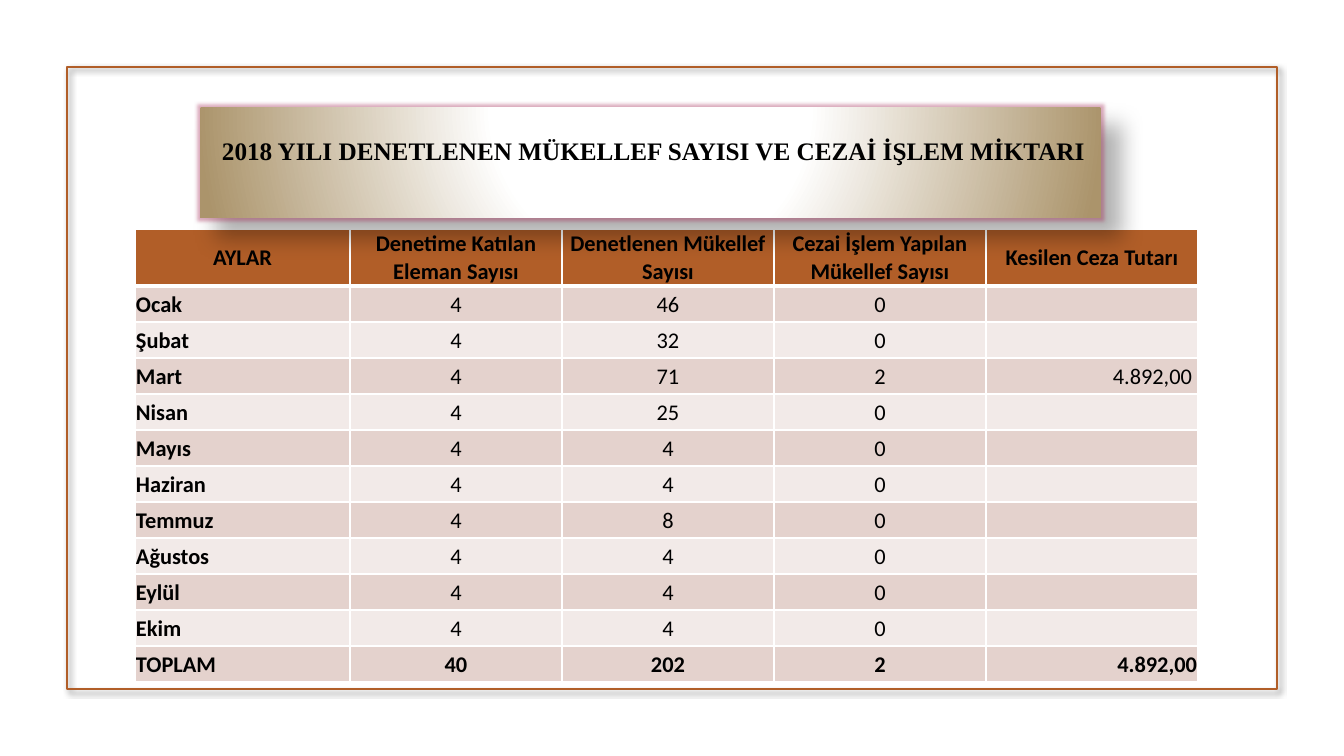
import pptx
import pptx.util
import pptx.oxml
from pptx.dml.color import RGBColor
from pptx.enum.shapes import MSO_SHAPE
from pptx.enum.text import MSO_ANCHOR, PP_ALIGN

TITLE = "2018 YILI DENETLENEN MÜKELLEF SAYISI VE CEZAİ İŞLEM MİKTARI"
ROWS = [
    ("AYLAR", "Denetime Katılan Eleman Sayısı", "Denetlenen Mükellef Sayısı",
     "Cezai İşlem Yapılan Mükellef Sayısı", "Kesilen Ceza Tutarı"),
    ("Ocak", "4", "46", "0", ""),
    ("Şubat", "4", "32", "0", ""),
    ("Mart", "4", "71", "2", "4.892,00"),
    ("Nisan", "4", "25", "0", ""),
    ("Mayıs", "4", "4", "0", ""),
    ("Haziran", "4", "4", "0", ""),
    ("Temmuz", "4", "8", "0", ""),
    ("Ağustos", "4", "4", "0", ""),
    ("Eylül", "4", "4", "0", ""),
    ("Ekim", "4", "4", "0", ""),
    ("TOPLAM", "40", "202", "2", "4.892,00"),
]
COL_WIDTHS = [215, 212, 212, 212, 212]
HEADER_HEIGHT, ROW_HEIGHT = 57, 36
FRAME_BOX = (67, 67, 1210, 622)
TITLE_BOX = (200, 108, 901, 110)
TABLE_LEFT, TABLE_TOP = 135, 229

BLACK = RGBColor(0, 0, 0)
WHITE = RGBColor(255, 255, 255)
RUST = RGBColor(0xB1, 0x5E, 0x28)
BAND_DARK = RGBColor(0xE4, 0xD2, 0xCD)
BAND_LIGHT = RGBColor(0xF2, 0xEA, 0xE8)
TAN = RGBColor(0xAB, 0x94, 0x6B)
ROSE = RGBColor(0xA8, 0x30, 0x5C)
NS = 'xmlns:a="http://schemas.openxmlformats.org/drawingml/2006/main"'


def px(n):
    return round(n * 914400 / 100.8)


def color_xml(color, alpha=100):
    return f'<a:srgbClr val="{color}"><a:alpha val="{alpha * 1000}"/></a:srgbClr>'


def add_xml(parent, xml):
    parent.append(pptx.oxml.parse_xml(xml))


def add_effects(shape, alpha, blur, dist, glow=""):
    add_xml(shape._element.spPr,
            f'<a:effectLst {NS}>{glow}<a:outerShdw blurRad="{blur * 12700}" '
            f'dist="{dist * 12700}" dir="2700000" algn="tl" rotWithShape="0">'
            f'{color_xml(BLACK, alpha)}</a:outerShdw></a:effectLst>')


def set_font(p, name, size, bold):
    p.font.name = name
    p.font.size = pptx.util.Pt(size)
    p.font.bold = bold
    p.font.color.rgb = BLACK


def add_frame(s):
    frame = s.shapes.add_shape(MSO_SHAPE.RECTANGLE, *map(px, FRAME_BOX))
    frame.fill.background()
    frame.line.color.rgb = RUST
    frame.line.width = pptx.util.Pt(1.25)
    add_effects(frame, 60, 4, 3)


def format_cell(cell, text, row, col):
    header, total = row == 0, row == len(ROWS) - 1
    cell.fill.solid()
    cell.fill.fore_color.rgb = RUST if header else BAND_DARK if row % 2 else BAND_LIGHT
    cell.vertical_anchor = MSO_ANCHOR.MIDDLE
    amount = col == 4 and not header
    cell.margin_left = cell.margin_top = px(1)
    cell.margin_right = px(6 if amount and not total else 1)
    cell.margin_bottom = 0
    p = cell.text_frame.paragraphs[0]
    p.text = text
    p.alignment = (PP_ALIGN.RIGHT if amount else
                   PP_ALIGN.LEFT if col == 0 and not header else PP_ALIGN.CENTER)
    set_font(p, "Calibri", 16, header or total or col == 0)
    tcPr = cell._tc.get_or_add_tcPr()
    for i, side in enumerate("LRTB"):
        thick = (header and side == "B") or (row == 1 and side == "T")
        tcPr.insert(i, pptx.oxml.parse_xml(
            f'<a:ln{side} {NS} w="{12700 * (3 if thick else 1)}"><a:solidFill>'
            f'{color_xml(WHITE)}</a:solidFill></a:ln{side}>'))


def add_month_table(s):
    heights = [HEADER_HEIGHT] + [ROW_HEIGHT] * (len(ROWS) - 1)
    table = s.shapes.add_table(len(ROWS), len(COL_WIDTHS), px(TABLE_LEFT), px(TABLE_TOP),
                               px(sum(COL_WIDTHS)), px(sum(heights))).table
    table.horz_banding = False
    for column, width in zip(table.columns, COL_WIDTHS):
        column.width = px(width)
    for r, values in enumerate(ROWS):
        table.rows[r].height = px(heights[r])
        for c, text in enumerate(values):
            format_cell(table.cell(r, c), text, r, c)


def format_title(s):
    title = s.shapes.title
    title.left, title.top, title.width, title.height = map(px, TITLE_BOX)
    stops = "".join(f'<a:gs pos="{pos * 1000}">{color_xml(color)}</a:gs>'
                    for pos, color in ((0, WHITE), (35, WHITE), (100, TAN)))
    add_xml(title._element.spPr,
            f'<a:gradFill {NS} rotWithShape="1"><a:gsLst>{stops}</a:gsLst>'
            '<a:path path="circle"><a:fillToRect l="50000" t="-80000" r="50000" b="180000"/>'
            '</a:path></a:gradFill>')
    add_effects(title, 30, 15, 18,
                f'<a:glow rad="63500">{color_xml(ROSE, 40)}</a:glow>')
    tf = title.text_frame
    tf.text = TITLE
    tf.word_wrap = True
    tf.vertical_anchor = MSO_ANCHOR.MIDDLE
    tf.margin_left, tf.margin_right = px(13), px(7)
    tf.margin_top, tf.margin_bottom = px(5), px(31)
    p = tf.paragraphs[0]
    p.alignment = PP_ALIGN.CENTER
    set_font(p, "Times New Roman", 18, True)
    s.shapes._spTree.append(title._element)


def main():
    prs = pptx.Presentation()
    prs.slide_width, prs.slide_height = px(1344), px(756)
    s = prs.slides.add_slide(prs.slide_layouts[5])
    add_frame(s)
    add_month_table(s)
    format_title(s)
    prs.save("out.pptx")


if __name__ == "__main__":
    main()
